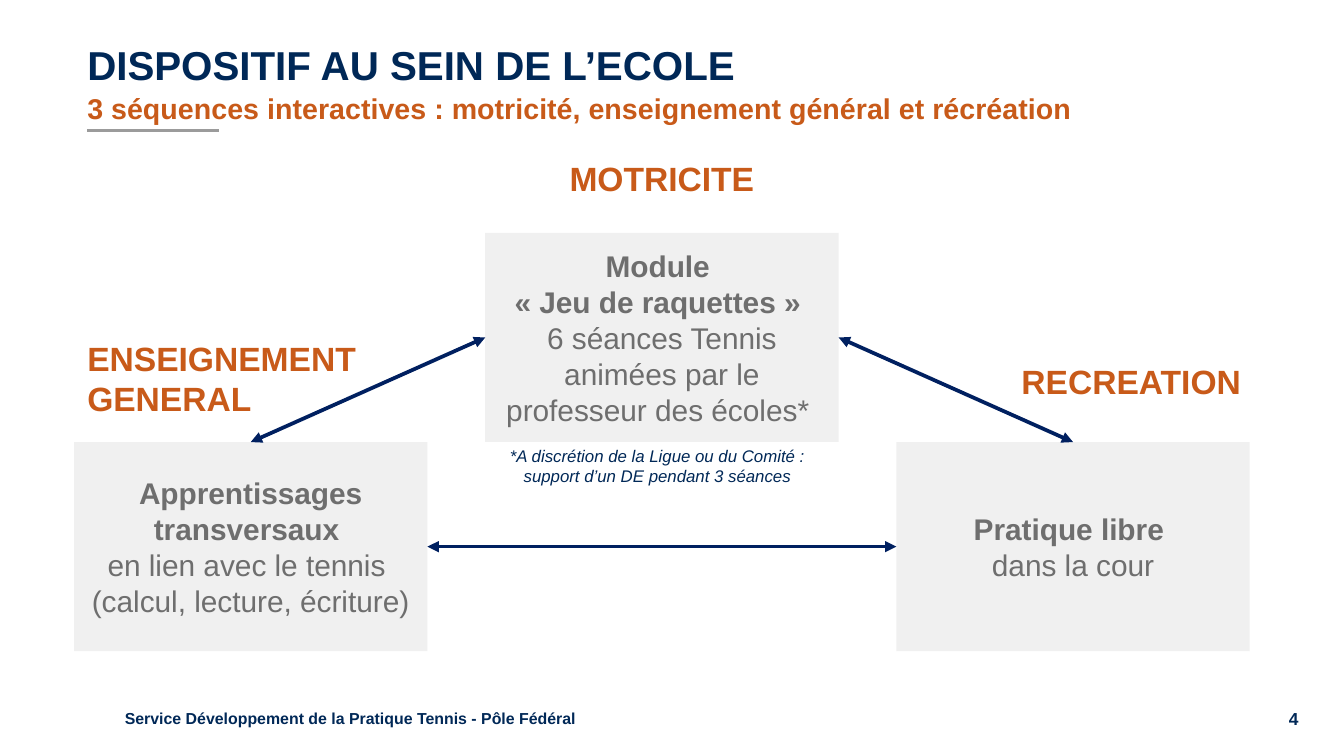
from dataclasses import dataclass

from pptx import Presentation
from pptx.dml.color import RGBColor
from pptx.enum.shapes import MSO_CONNECTOR, MSO_SHAPE
from pptx.enum.text import MSO_ANCHOR, PP_ALIGN
from pptx.oxml.ns import qn
from pptx.util import Cm, Pt
from lxml.etree import SubElement


@dataclass(frozen=True)
class Theme:
    font: str = "Arial"
    navy: str = "002857"
    orange: str = "C85A19"
    grey: str = "6E6E6E"
    panel: str = "F0F0F0"
    rule: str = "9B9B9B"
    arrow: str = "002060"
    title: float = 21.6
    subtitle: float = 15.3
    label: float = 18
    body: float = 16
    note: float = 9
    footer: float = 8.5
    number: float = 9.3


T = Theme()
LEFT, CENTER, RIGHT = PP_ALIGN.LEFT, PP_ALIGN.CENTER, PP_ALIGN.RIGHT


def write(tf, lines, size, color, align=LEFT, bold=0, italic=False):
    for i, line in enumerate(lines):
        p = tf.paragraphs[0] if i == 0 else tf.add_paragraph()
        p.alignment = align
        r = p.add_run()
        r.text = line
        r.font.name = T.font
        r.font.size = Pt(size)
        r.font.bold = i < bold
        r.font.italic = italic
        r.font.color.rgb = RGBColor.from_string(color)


def add_text(s, box, lines, size, color, anchor=MSO_ANCHOR.MIDDLE, wrap=True, **style):
    tf = s.shapes.add_textbox(*map(Cm, box)).text_frame
    tf.word_wrap = wrap
    tf.vertical_anchor = anchor
    write(tf, lines, size, color, **style)


def add_line(s, start, end, color, width):
    c = s.shapes.add_connector(MSO_CONNECTOR.STRAIGHT, *map(Cm, start + end))
    c.line.color.rgb = RGBColor.from_string(color)
    c.line.width = Pt(width)
    SubElement(c._element.spPr, qn("a:effectLst"))
    return c


def add_header(s, box):
    x, y, w, h = box
    rows = [
        (y, "DISPOSITIF AU SEIN DE L’ECOLE", T.title, T.navy),
        (y + 0.96, "3 séquences interactives : motricité, enseignement général et récréation",
         T.subtitle, T.orange),
    ]
    for top, text, size, color in rows:
        add_text(s, (x, top, w, 0.85), [text], size, color, MSO_ANCHOR.TOP, bold=1)
    add_line(s, (x + 0.25, y + h), (x + 2.74, y + h), T.rule, 1.5)


def add_panel(s, box, lines, bold):
    sp = s.shapes.add_shape(MSO_SHAPE.RECTANGLE, *map(Cm, box))
    sp.shadow.inherit = False
    sp.fill.solid()
    sp.fill.fore_color.rgb = RGBColor.from_string(T.panel)
    sp.line.fill.background()
    tf = sp.text_frame
    tf.word_wrap = True
    tf.vertical_anchor = MSO_ANCHOR.MIDDLE
    write(tf, lines, T.body, T.grey, CENTER, bold)
    return sp


def join(s, a, a_side, b, b_side):
    c = add_line(s, (0, 0), (1, 1), T.arrow, 2)
    c.begin_connect(a, a_side)
    c.end_connect(b, b_side)
    ln = c.line._get_or_add_ln()
    for end in ("a:headEnd", "a:tailEnd"):
        SubElement(ln, qn(end), type="triangle")


def add_triangle(s, box):
    x, y, w, h = box
    pw, ph = 6.68, h / 2
    step = (w - pw) / 2
    teaching = add_panel(s, (x, y + ph, pw, ph), [
        "Apprentissages transversaux ", "en lien avec le tennis ",
        "(calcul, lecture, écriture)"], 1)
    motor = add_panel(s, (x + step, y, pw, ph), [
        "Module ", "« Jeu de raquettes » ",
        "6 séances Tennis animées par le professeur des écoles* "], 2)
    play = add_panel(s, (x + 2 * step, y + ph, pw, ph), ["Pratique libre ", "dans la cour"], 1)

    lw, lh = 6, 2.54
    labels = [
        (x, y + 1.47, ["ENSEIGNEMENT", "GENERAL"], LEFT),
        (x + (w - lw) / 2, y - 2.31, ["MOTRICITE"], CENTER),
        (x + w - 2.24 - lw / 2, y + 1.52, ["RECREATION"], CENTER),
    ]
    for left, top, lines, align in labels:
        add_text(s, (left, top, lw, lh), lines, T.label, T.orange,
                 wrap=False, align=align, bold=2)

    join(s, motor, 1, teaching, 0)
    join(s, play, 1, teaching, 3)
    join(s, play, 0, motor, 3)
    add_text(s, (x + 7.14, y + ph - 0.16, 7.85, 1.22), [
        "*A discrétion de la Ligue ou du Comité : ",
        "support d’un DE pendant 3 séances "], T.note, T.navy, align=CENTER, italic=True)


def add_footer(s, box):
    x, y, w, h = box
    add_text(s, (x, y, 11.73, h),
             ["Service Développement de la Pratique Tennis - Pôle Fédéral"],
             T.footer, T.navy, bold=1)
    add_text(s, (x + w - 7.65, y, 7.65, h), ["4"], T.number, T.navy, align=RIGHT, bold=1)


def main():
    prs = Presentation()
    prs.slide_width, prs.slide_height = Cm(25.4), Cm(14.28)
    s = prs.slides.add_slide(prs.slide_layouts[6])
    add_footer(s, (2.11, 13.28, 22.68, 0.58))
    add_header(s, (1.4, 0.64, 22.22, 1.82))
    add_triangle(s, (1.4, 4.4, 22.22, 7.9))
    prs.save("out.pptx")


if __name__ == "__main__":
    main()
